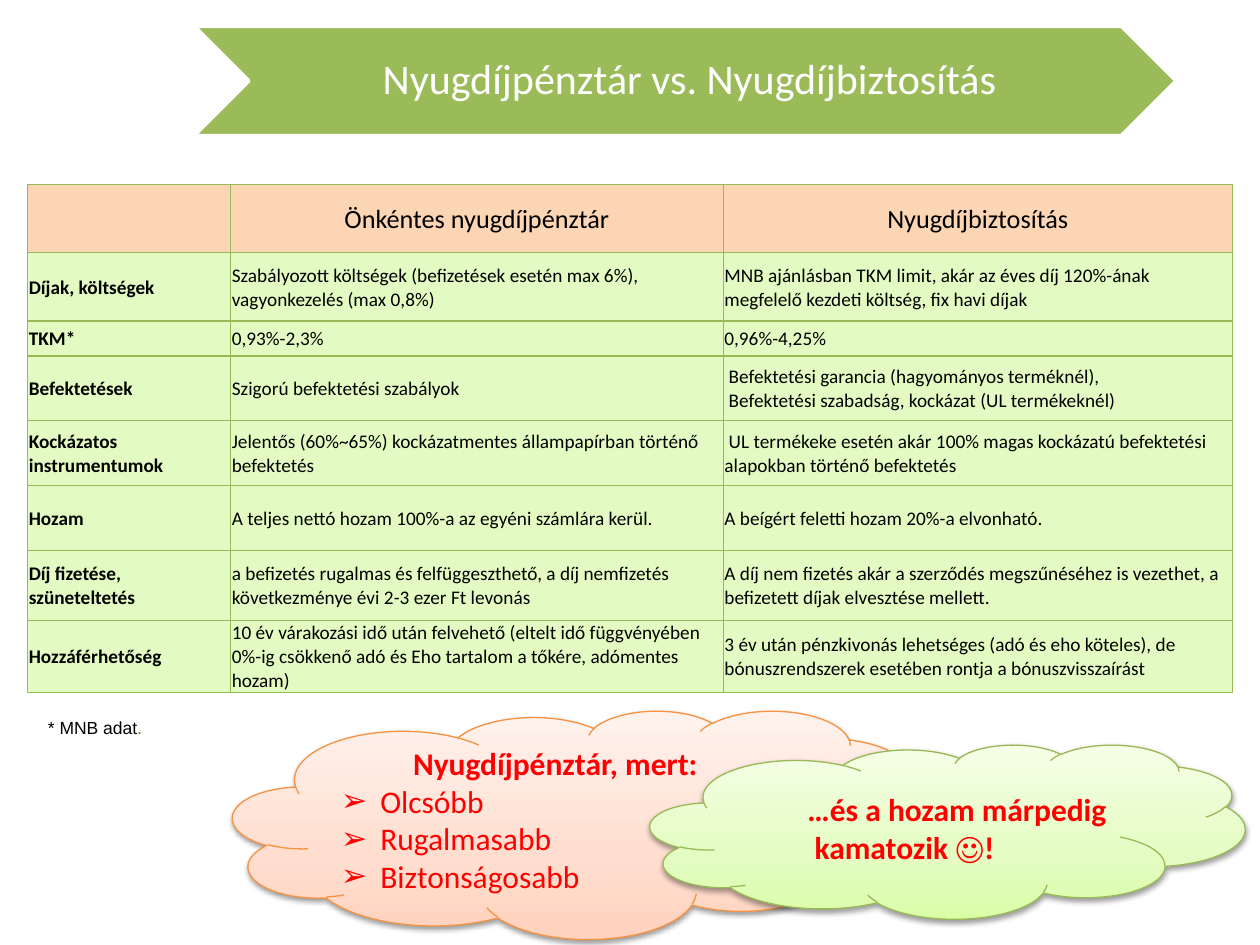
from dataclasses import dataclass

from lxml import etree
from pptx import Presentation
from pptx.dml.color import RGBColor
from pptx.enum.shapes import MSO_SHAPE
from pptx.enum.text import MSO_ANCHOR, MSO_AUTO_SIZE, PP_ALIGN
from pptx.oxml import parse_xml
from pptx.oxml.ns import nsdecls, qn
from pptx.util import Pt

CHEVRON, CLOUD = MSO_SHAPE.CHEVRON, MSO_SHAPE.CLOUD
MIDDLE = MSO_ANCHOR.MIDDLE
LEFT, CENTER = PP_ALIGN.LEFT, PP_ALIGN.CENTER
GROW = MSO_AUTO_SIZE.SHAPE_TO_FIT_TEXT


@dataclass(frozen=True)
class Theme:
    font: str = "Calibri"
    plain: str = "Arial"
    title: int = 24
    call: int = 18
    head: int = 15
    body: int = 11
    note: int = 10
    white: str = "FFFFFF"
    black: str = "000000"
    red: str = "FF0000"
    olive: str = "767D15"
    green: str = "9BBB59"
    edge: str = "98B955"
    amber: str = "F69240"
    peach: str = "FCD5B5"
    mint: str = "E3FBC2"
    warm: tuple = ((0, "FFD2BD"), (35, "FFDED0"), (100, "FFF2ED"))
    fresh: tuple = ((0, "DAFDA7"), (35, "E4FCC2"), (100, "F5FFE7"))


def rgb(code):
    return RGBColor.from_string(code)


def write(para, text, size, color, font="Calibri", bold=False,
          align=LEFT, left=0, first=0, bullet=None):
    """Add text to a paragraph; each newline becomes a line break."""
    para.alignment = align
    props = para._p.get_or_add_pPr()
    props.set("marL", str(Pt(left)))
    props.set("indent", str(Pt(first)))
    if bullet:
        etree.SubElement(props, qn("a:buFont")).set("typeface", "Arial")
        etree.SubElement(props, qn("a:buChar")).set("char", bullet)
    for i, line in enumerate(text.split("\n")):
        if i:
            para.add_line_break()
        run = para.add_run()
        run.text = line
        run.font.size = Pt(size)
        run.font.name = font
        run.font.bold = bold
        run.font.color.rgb = rgb(color)


class Deck:
    def __init__(self, theme):
        self.theme = theme
        self.file = Presentation()
        self.file.slide_width, self.file.slide_height = Pt(720), Pt(540)
        self.slide = self.file.slides.add_slide(self.file.slide_layouts[5])

    def shape(self, kind, box, line, width):
        item = self.slide.shapes.add_shape(kind, *map(Pt, box))
        item.shadow.inherit = False
        item.line.color.rgb = rgb(line)
        item.line.width = Pt(width)
        return item

    def title(self, text, box, inner):
        t = self.theme
        arrow = self.shape(CHEVRON, box, t.white, 2)
        arrow.fill.solid()
        arrow.fill.fore_color.rgb = rgb(t.green)
        # The title sits in front of its chevron
        head = self.slide.shapes.title
        arrow.element.addnext(head.element)
        head.left, head.top, head.width, head.height = map(Pt, inner)
        frame = head.text_frame
        frame.vertical_anchor = MIDDLE
        frame.margin_left = Pt(6)
        frame.margin_top = frame.margin_right = frame.margin_bottom = Pt(2)
        para = frame.paragraphs[0]
        para.line_spacing = 0.9
        write(para, text, t.title, t.white, align=CENTER, left=28)

    def cloud(self, box, stops, line):
        item = self.shape(CLOUD, box, line, 0.75)
        marks = "".join(
            f'<a:gs pos="{at * 1000}"><a:srgbClr val="{code}"/></a:gs>'
            for at, code in stops)
        fade = parse_xml(
            f'<a:gradFill {nsdecls("a")} rotWithShape="1"><a:gsLst>{marks}'
            '</a:gsLst><a:lin ang="16200000" scaled="0"/></a:gradFill>')
        shade = parse_xml(
            f'<a:outerShdw {nsdecls("a")} blurRad="{Pt(3.1)}" '
            f'dist="{Pt(1.6)}" dir="5400000" rotWithShape="0">'
            '<a:srgbClr val="000000"><a:alpha val="38000"/></a:srgbClr>'
            '</a:outerShdw>')
        props = item.element.spPr
        props.find(qn("a:prstGeom")).addnext(fade)
        props.find(qn("a:effectLst")).append(shade)
        frame = item.text_frame
        frame.word_wrap = True
        frame.vertical_anchor = MIDDLE
        return frame

    def note(self, box):
        frame = self.slide.shapes.add_textbox(*map(Pt, box)).text_frame
        frame.word_wrap = False
        frame.auto_size = GROW
        return frame.paragraphs[0]

    def cell(self, cell, text, fill, **style):
        cell.vertical_anchor = MIDDLE
        cell.margin_left = cell.margin_right = cell.margin_top = Pt(0.7)
        cell.margin_bottom = 0
        props = cell._tc.get_or_add_tcPr()
        for side in "LRTB":
            props.append(parse_xml(
                f'<a:ln{side} {nsdecls("a")} w="{Pt(0.75)}"><a:solidFill>'
                f'<a:srgbClr val="{self.theme.edge}"/></a:solidFill>'
                f'</a:ln{side}>'))
        cell.fill.solid()
        cell.fill.fore_color.rgb = rgb(fill)
        if text:
            write(cell.text_frame.paragraphs[0], text,
                  color=self.theme.black, **style)

    def table(self, left, top, wide, high, data):
        t = self.theme
        box = (left, top, sum(wide), sum(high))
        grid = self.slide.shapes.add_table(
            len(high), len(wide), *map(Pt, box)).table
        grid.first_row = grid.horz_banding = False
        for col, size in zip(grid.columns, wide):
            col.width = Pt(size)
        for row, size in zip(grid.rows, high):
            row.height = Pt(size)
        for r, texts in enumerate(data):
            for c, text in enumerate(texts):
                if r == 0:
                    self.cell(grid.cell(r, c), text, t.peach,
                              size=t.head, align=CENTER)
                else:
                    self.cell(grid.cell(r, c), text, t.mint,
                              size=t.body, bold=c == 0)


ROWS = [
    ("", "Önkéntes nyugdíjpénztár", "Nyugdíjbiztosítás"),
    ("Díjak, költségek",
     "Szabályozott költségek (befizetések esetén max 6%), vagyonkezelés (max 0,8%)",
     "MNB ajánlásban TKM limit, akár az éves díj 120%-ának megfelelő kezdeti költség, fix havi díjak"),
    ("TKM*", "0,93%-2,3%", "0,96%-4,25%"),
    ("Befektetések", "Szigorú befektetési szabályok",
     " Befektetési garancia (hagyományos terméknél), \n Befektetési szabadság, kockázat (UL termékeknél)"),
    ("Kockázatos instrumentumok",
     "Jelentős (60%~65%) kockázatmentes állampapírban történő befektetés",
     " UL termékeke esetén akár 100% magas kockázatú befektetési alapokban történő befektetés"),
    ("Hozam", "A teljes nettó hozam 100%-a az egyéni számlára kerül.",
     "A beígért feletti hozam 20%-a elvonható."),
    ("Díj fizetése, szüneteltetés",
     "a befizetés rugalmas és felfüggeszthető, a díj nemfizetés következménye évi 2-3 ezer Ft levonás",
     "A díj nem fizetés akár a szerződés megszűnéséhez is vezethet, a befizetett díjak elvesztése mellett."),
    ("Hozzáférhetőség",
     "10 év várakozási idő után felvehető (eltelt idő függvényében 0%-ig csökkenő adó és Eho tartalom a tőkére, adómentes hozam)",
     "3 év után pénzkivonás lehetséges (adó és eho köteles), de bónuszrendszerek esetében rontja a bónuszvisszaírást"),
]


def main():
    t = Theme()
    deck = Deck(t)

    # Title banner
    deck.title("Nyugdíjpénztár vs. Nyugdíjbiztosítás",
               (111, 15, 561, 62.5), (129, 15, 498, 62.5))

    # Comparison table
    deck.table(15.8, 105.5, (116, 281.5, 291),
               (39, 39, 20, 37, 37, 37, 40, 40), ROWS)

    # Reasons cloud
    frame = deck.cloud((133, 406, 397, 130.5), t.warm, t.amber)
    write(frame.paragraphs[0], "Nyugdíjpénztár, mert:", t.call, t.red,
          bold=True, align=CENTER)
    for text in ("Olcsóbb", "Rugalmasabb", "Biztonságosabb"):
        write(frame.add_paragraph(), text, t.call, t.red,
              left=22.5, first=-22.5, bullet="➢")

    # Footnote
    para = deck.note((20, 406, 68.5, 19.5))
    for text, color in (("* MNB adat", t.black), (".", t.olive)):
        write(para, text, t.note, color, font=t.plain, align=CENTER)

    # Closing cloud
    frame = deck.cloud((371.5, 425.5, 340, 99.5), t.fresh, t.edge)
    write(frame.paragraphs[0], "…és a hozam márpedig\n kamatozik ☺!",
          t.call, t.red, bold=True, left=36)

    deck.file.save("out.pptx")


if __name__ == "__main__":
    main()
